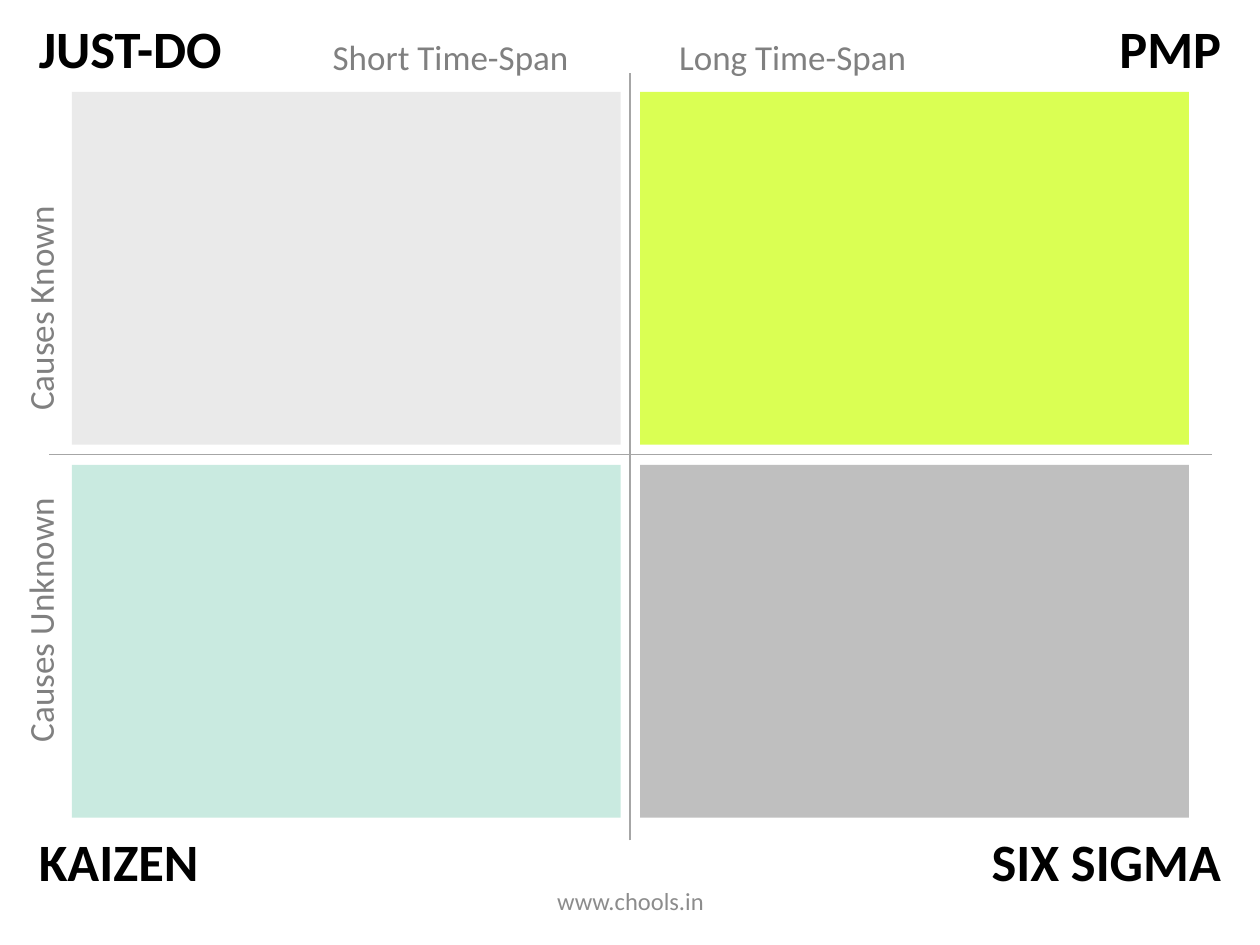
from dataclasses import dataclass

from lxml import etree
from pptx import Presentation
from pptx.dml.color import RGBColor
from pptx.enum.shapes import MSO_CONNECTOR, MSO_SHAPE
from pptx.enum.text import MSO_ANCHOR, PP_ALIGN
from pptx.oxml.ns import qn
from pptx.slide import Slide
from pptx.util import Inches, Pt

ROUNDED = MSO_SHAPE.ROUNDED_RECTANGLE
STRAIGHT = MSO_CONNECTOR.STRAIGHT
MIDDLE, TOP = MSO_ANCHOR.MIDDLE, MSO_ANCHOR.TOP
LEFT, CENTER, RIGHT = PP_ALIGN.LEFT, PP_ALIGN.CENTER, PP_ALIGN.RIGHT

FONT = "Calibri"
COLORS = {
    "just_do": "EAEAEA",
    "pmp": "DAFF53",
    "kaizen": "C9EAE0",
    "six_sigma": "BFBFBF",
    "axis": "A6A6A6",
    "heading": "000000",
    "axis_label": "808080",
    "footer": "8C8C8C",
}
COLUMNS = (0.57, 5.08)
ROWS = (0.73, 3.69)
QUADRANT_WIDTH, QUADRANT_HEIGHT = 4.355, 2.8
HEADING_TOPS = (0.08, 6.53)
HEADING_HEIGHT = 0.61
MARGIN = 0.21
SLIDE_WIDTH, SLIDE_HEIGHT = 10, 7.5


@dataclass(frozen=True)
class Quadrant:
    heading: str
    color: str
    column: int
    row: int
    heading_width: float


@dataclass(frozen=True)
class Label:
    text: str
    left: float
    top: float
    width: float
    height: float
    size: float
    color: str
    align: PP_ALIGN = LEFT
    bold: bool = False
    wrap: bool = True
    anchor: MSO_ANCHOR = TOP
    rotation: float = 0
    inset: float = 0.1
    tab: float = 0


QUADRANTS = (
    Quadrant("JUST-DO", "just_do", 0, 0, 1.69),
    Quadrant("PMP", "pmp", 1, 0, 1.02),
    Quadrant("KAIZEN", "kaizen", 0, 1, 1.48),
    Quadrant("SIX SIGMA", "six_sigma", 1, 1, 2.04),
)
LABELS = (
    Label("Causes Unknown\tCauses Known", -2.08, 3.39, 4.8, 0.44, 20,
          "axis_label", rotation=270, inset=0.12, tab=2.63),
    Label("Short Time-Span\tLong Time-Span", 2.51, 0.23, 4.98, 0.44, 20,
          "axis_label", inset=0.13, tab=2.75),
    Label("www.chools.in", 3.42, 6.95, 3.17, 0.4, 14, "footer",
          align=CENTER, anchor=MIDDLE),
)


def color(name: str) -> RGBColor:
    return RGBColor.from_string(COLORS[name])


def add_label(slide: Slide, label: Label) -> None:
    box = slide.shapes.add_textbox(Inches(label.left), Inches(label.top),
                                   Inches(label.width), Inches(label.height))
    box.rotation = label.rotation
    frame = box.text_frame
    frame.word_wrap = label.wrap
    frame.vertical_anchor = label.anchor
    frame.margin_left = Inches(label.inset)
    frame.text = label.text
    para = frame.paragraphs[0]
    para.alignment = label.align
    if label.tab:
        tabs = etree.SubElement(para._p.get_or_add_pPr(), qn("a:tabLst"))
        etree.SubElement(tabs, qn("a:tab"), pos=str(Inches(label.tab)), algn="l")
    for span in para.runs:
        span.font.name = FONT
        span.font.size = Pt(label.size)
        span.font.bold = label.bold
        span.font.color.rgb = color(label.color)


def add_quadrant(slide: Slide, quadrant: Quadrant) -> None:
    panel = slide.shapes.add_shape(
        ROUNDED, Inches(COLUMNS[quadrant.column]), Inches(ROWS[quadrant.row]),
        Inches(QUADRANT_WIDTH), Inches(QUADRANT_HEIGHT))
    panel.adjustments[0] = 0
    panel.shadow.inherit = False
    panel.fill.solid()
    panel.fill.fore_color.rgb = color(quadrant.color)
    panel.line.fill.background()


def add_heading(slide: Slide, quadrant: Quadrant) -> None:
    on_right = quadrant.column == 1
    left = SLIDE_WIDTH - MARGIN - quadrant.heading_width if on_right else MARGIN
    add_label(slide, Label(
        quadrant.heading, left, HEADING_TOPS[quadrant.row],
        quadrant.heading_width, HEADING_HEIGHT, 30, "heading",
        align=RIGHT if on_right else LEFT, bold=True, wrap=False))


def add_axis(slide: Slide, x1: float, y1: float, x2: float, y2: float) -> None:
    axis = slide.shapes.add_connector(STRAIGHT, Inches(x1), Inches(y1),
                                      Inches(x2), Inches(y2))
    axis.line.color.rgb = color("axis")
    axis.line.width = Pt(0.75)
    etree.SubElement(axis._element.spPr, qn("a:effectLst"))


def main() -> None:
    deck = Presentation()
    deck.slide_width, deck.slide_height = Inches(SLIDE_WIDTH), Inches(SLIDE_HEIGHT)
    page = deck.slides.add_slide(deck.slide_layouts[6])
    for quadrant in QUADRANTS:
        add_quadrant(page, quadrant)
    add_axis(page, 0.39, 3.61, 9.62, 3.61)
    add_axis(page, 5, 6.67, 5, 0.58)
    for quadrant in QUADRANTS:
        add_heading(page, quadrant)
    for label in LABELS:
        add_label(page, label)
    deck.save("out.pptx")


if __name__ == "__main__":
    main()
